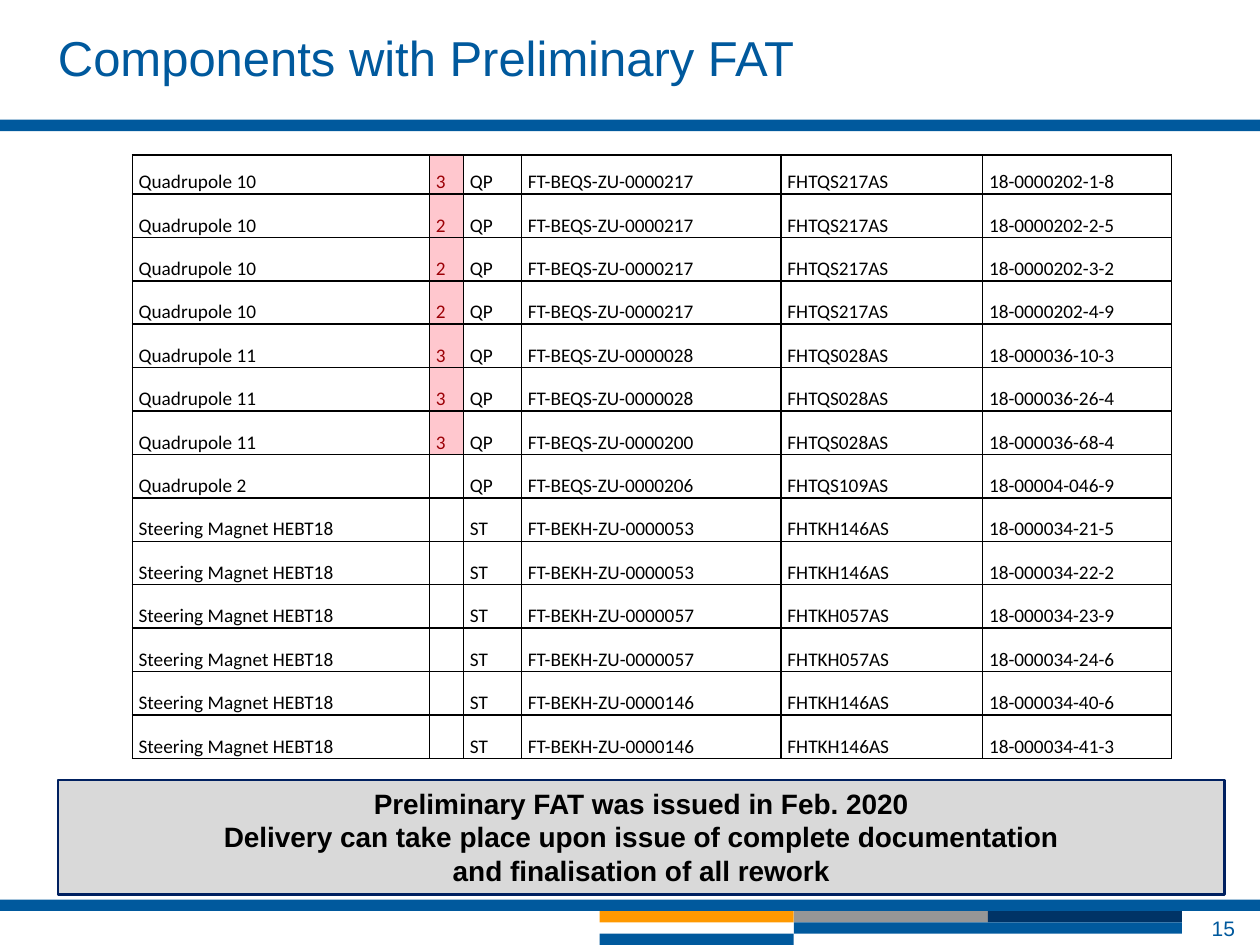
from lxml.etree import SubElement
from pptx import Presentation
from pptx.dml.color import RGBColor
from pptx.enum.shapes import MSO_SHAPE
from pptx.enum.text import MSO_ANCHOR, PP_ALIGN
from pptx.oxml.ns import qn
from pptx.util import Inches, Pt

BLUE = RGBColor(0x00, 0x59, 0x9D)
ORANGE = RGBColor(0xFF, 0x99, 0x00)
GREY = RGBColor(0x96, 0x96, 0x96)
NAVY = RGBColor(0x00, 0x33, 0x66)
BLACK = RGBColor(0x00, 0x00, 0x00)
ALERT_TEXT = RGBColor(0x9C, 0x00, 0x06)
ALERT_FILL = RGBColor(0xFF, 0xC7, 0xCE)
NOTE_FILL = RGBColor(0xD9, 0xD9, 0xD9)
NOTE_LINE = RGBColor(0x00, 0x20, 0x60)

BAND = 0.09
BLOCK = 1.54
BLOCKS_LEFT = 4.76
FOOTER_TOP = 7.14

COLUMN_WIDTHS = (2.36, 0.27, 0.46, 2.06, 1.6, 1.5)
FIRST_ROW_HEIGHT = 0.31
TABLE_HEIGHT = 4.79
STEERING = "Steering Magnet HEBT18"
COMPONENTS = (
    ("Quadrupole 10", "3", "QP", "FT-BEQS-ZU-0000217", "FHTQS217AS", "18-0000202-1-8"),
    ("Quadrupole 10", "2", "QP", "FT-BEQS-ZU-0000217", "FHTQS217AS", "18-0000202-2-5"),
    ("Quadrupole 10", "2", "QP", "FT-BEQS-ZU-0000217", "FHTQS217AS", "18-0000202-3-2"),
    ("Quadrupole 10", "2", "QP", "FT-BEQS-ZU-0000217", "FHTQS217AS", "18-0000202-4-9"),
    ("Quadrupole 11", "3", "QP", "FT-BEQS-ZU-0000028", "FHTQS028AS", "18-000036-10-3"),
    ("Quadrupole 11", "3", "QP", "FT-BEQS-ZU-0000028", "FHTQS028AS", "18-000036-26-4"),
    ("Quadrupole 11", "3", "QP", "FT-BEQS-ZU-0000200", "FHTQS028AS", "18-000036-68-4"),
    ("Quadrupole 2", "", "QP", "FT-BEQS-ZU-0000206", "FHTQS109AS", "18-00004-046-9"),
    (STEERING, "", "ST", "FT-BEKH-ZU-0000053", "FHTKH146AS", "18-000034-21-5"),
    (STEERING, "", "ST", "FT-BEKH-ZU-0000053", "FHTKH146AS", "18-000034-22-2"),
    (STEERING, "", "ST", "FT-BEKH-ZU-0000057", "FHTKH057AS", "18-000034-23-9"),
    (STEERING, "", "ST", "FT-BEKH-ZU-0000057", "FHTKH057AS", "18-000034-24-6"),
    (STEERING, "", "ST", "FT-BEKH-ZU-0000146", "FHTKH146AS", "18-000034-40-6"),
    (STEERING, "", "ST", "FT-BEKH-ZU-0000146", "FHTKH146AS", "18-000034-41-3"),
)
DELIVERY_NOTE = (
    "Preliminary FAT was issued in Feb. 2020\n"
    "Delivery can take place upon issue of complete documentation\n"
    "and finalisation of all rework"
)


def write(frame, text, size, font="Arial", color=BLACK, bold=False, align=PP_ALIGN.LEFT):
    """Fill a text frame with one paragraph per line of text."""
    frame.text = text
    for paragraph in frame.paragraphs:
        paragraph.alignment = align
        paragraph.font.size = Pt(size)
        for run in paragraph.runs:
            run.font.size = Pt(size)
            run.font.name = font
            run.font.bold = bold
            run.font.color.rgb = color


def set_margins(holder, side, end):
    """Set the side margins and the top and bottom margins in inches."""
    holder.margin_left = holder.margin_right = Inches(side)
    holder.margin_top = holder.margin_bottom = Inches(end)


def add_box(slide, left, top, width, height, fill, line=None):
    """Add a filled rectangle, outlined when a line colour is given."""
    box = slide.shapes.add_shape(
        MSO_SHAPE.RECTANGLE, Inches(left), Inches(top), Inches(width), Inches(height)
    )
    box.shadow.inherit = False
    box.fill.solid()
    box.fill.fore_color.rgb = fill
    if line is None:
        box.line.fill.background()
    else:
        box.line.color.rgb = line
        box.line.width = Pt(1.25)
    return box


def add_bands(slide):
    """Add the header rule and the stepped footer blocks."""
    blocks_top = FOOTER_TOP + BAND
    for column, color in enumerate((ORANGE, GREY, NAVY)):
        add_box(slide, BLOCKS_LEFT + column * BLOCK, blocks_top, BLOCK, BAND, color)
    for top in (0.95, FOOTER_TOP):
        add_box(slide, 0, top, 10, BAND, BLUE)
    add_box(slide, BLOCKS_LEFT + BLOCK, blocks_top + BAND, 2 * BLOCK, BAND, BLUE)
    add_box(slide, BLOCKS_LEFT, blocks_top + 2 * BAND, BLOCK, BAND, BLUE)


def add_title(slide, text):
    """Place and format the slide title."""
    title = slide.shapes.title
    title.left, title.top = Inches(0.46), Inches(0.24)
    title.width, title.height = Inches(9.41), Inches(0.43)
    set_margins(title.text_frame, 0, 0)
    title.text_frame.vertical_anchor = MSO_ANCHOR.MIDDLE
    write(title.text_frame, text, 28, color=BLUE)


def add_borders(cell):
    """Draw a thin black line on every side of a table cell."""
    properties = cell._tc.get_or_add_tcPr()
    for side in ("a:lnL", "a:lnR", "a:lnT", "a:lnB"):
        border = SubElement(properties, qn(side), w=str(Pt(1)))
        SubElement(SubElement(border, qn("a:solidFill")), qn("a:srgbClr"), val=str(BLACK))


def add_components(slide):
    """Add the component table, with the numbered cells highlighted."""
    table = slide.shapes.add_table(
        len(COMPONENTS), len(COLUMN_WIDTHS),
        Inches(1.05), Inches(1.23), Inches(sum(COLUMN_WIDTHS)), Inches(TABLE_HEIGHT),
    ).table
    table.first_row = table.horz_banding = False
    for column, width in zip(table.columns, COLUMN_WIDTHS):
        column.width = Inches(width)
    row_height = (TABLE_HEIGHT - FIRST_ROW_HEIGHT) / (len(COMPONENTS) - 1)
    for row_index, component in enumerate(COMPONENTS):
        table.rows[row_index].height = Inches(row_height if row_index else FIRST_ROW_HEIGHT)
        for column_index, value in enumerate(component):
            cell = table.cell(row_index, column_index)
            highlighted = column_index == 1 and value
            set_margins(cell, 0.05, 0)
            cell.vertical_anchor = MSO_ANCHOR.BOTTOM
            write(cell.text_frame, value, 11, font="Calibri",
                  color=ALERT_TEXT if highlighted else BLACK)
            add_borders(cell)
            if highlighted:
                cell.fill.solid()
                cell.fill.fore_color.rgb = ALERT_FILL
            else:
                cell.fill.background()


def add_delivery_note(slide):
    """Add the framed note below the table."""
    note = add_box(slide, 0.46, 6.19, 9.26, 0.91, NOTE_FILL, NOTE_LINE)
    note.text_frame.word_wrap = True
    note.text_frame.vertical_anchor = MSO_ANCHOR.TOP
    write(note.text_frame, DELIVERY_NOTE, 16, bold=True, align=PP_ALIGN.CENTER)


def add_page_number(slide, number):
    """Add the page number at the lower right."""
    page = slide.shapes.add_textbox(Inches(9.1), Inches(7.23), Inches(0.8), Inches(0.27))
    page.text_frame.word_wrap = True
    page.text_frame.vertical_anchor = MSO_ANCHOR.MIDDLE
    set_margins(page.text_frame, 0.1, 0)
    write(page.text_frame, number, 12, color=BLUE, align=PP_ALIGN.RIGHT)


def main():
    """Build and save the slide."""
    deck = Presentation()
    deck.slide_width, deck.slide_height = Inches(10), Inches(7.5)
    slide = deck.slides.add_slide(deck.slide_layouts[5])
    add_bands(slide)
    add_title(slide, "Components with Preliminary FAT")
    add_components(slide)
    add_delivery_note(slide)
    add_page_number(slide, "15")
    deck.save("out.pptx")


if __name__ == "__main__":
    main()
